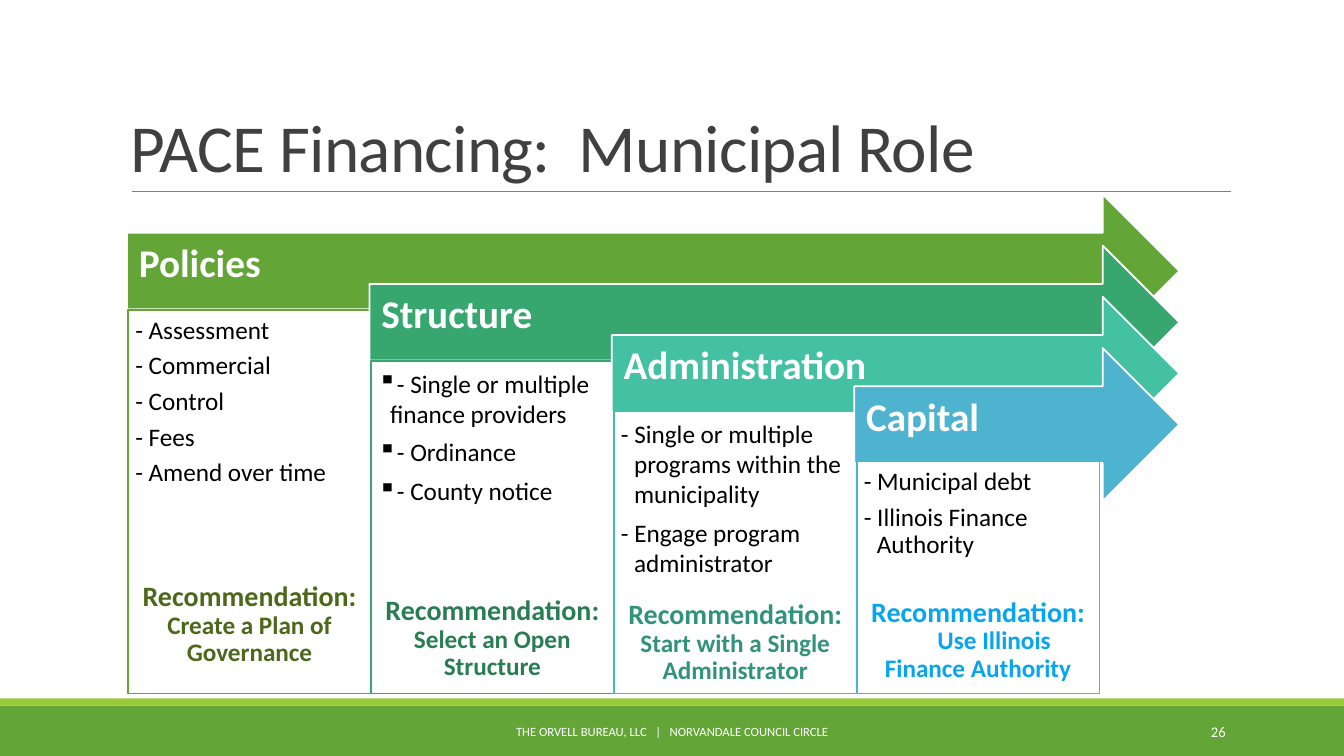
"""Build the municipal role slide with four stepped arrows and their cards."""
from lxml import etree
from pptx import Presentation
from pptx.dml.color import RGBColor
from pptx.enum import shapes, text
from pptx.oxml import ns
from pptx.util import Cm, Pt

FONT = "Calibri"
ARROW_RIGHT = 29.72
CARD_BOTTOM = 17.48
STAGES = [
    {"name": "Policies", "color": "63A537", "accent": "4D671B",
     "items": ["- Assessment", "- Commercial", "- Control", "- Fees", "- Amend over time"],
     "advice": "Create a Plan of Governance", "gap": 68},
    {"name": "Structure", "color": "37A76F", "accent": "297D53",
     "items": ["- Single or multiple finance providers", "- Ordinance", "- County notice"],
     "advice": "Select an Open Structure", "gap": 65,
     "hanging": 0.3, "bullet": "▪", "spacing": 1.0},
    {"name": "Administration", "color": "44C1A3", "accent": "31937B",
     "items": ["- Single or multiple programs within the municipality",
               "- Engage program administrator"],
     "advice": "Start with a Single Administrator", "gap": 16,
     "hanging": 0.33, "spacing": 1.0},
    {"name": "Capital", "color": "4EB3CF", "accent": "08A5EF",
     "items": ["- Municipal debt", "- Illinois Finance Authority"],
     "advice": "Use Illinois\vFinance Authority", "gap": 28,
     "hanging": 0.33, "advice_indent": 0.81},
]


def rgb(value):
    """Turn a hex string into a colour."""
    return RGBColor.from_string(value)


def apply(target, values):
    """Set each named attribute of the target."""
    for name, value in values.items():
        setattr(target, name, value)


def box(left, top, width, height):
    """Return a position and size given in centimetres."""
    return Cm(left), Cm(top), Cm(width), Cm(height)


def set_frame(shape, anchor, insets):
    """Set wrapping, anchor and insets, and return the text frame."""
    left, top, right, bottom = insets
    frame = shape.text_frame
    apply(frame, {"word_wrap": True, "vertical_anchor": anchor,
                  "auto_size": text.MSO_AUTO_SIZE.NONE,
                  "margin_left": Cm(left), "margin_top": Cm(top),
                  "margin_right": Cm(right), "margin_bottom": Cm(bottom)})
    return frame


def write(paragraph, words, size, color, bold=False, align=text.PP_ALIGN.LEFT,
          spacing=0.9, after=0):
    """Fill a paragraph with formatted text."""
    paragraph.text = words
    apply(paragraph, {"alignment": align, "line_spacing": spacing,
                      "space_before": Pt(0), "space_after": Pt(after)})
    for run in paragraph.runs:
        apply(run.font, {"name": FONT, "size": Pt(size), "bold": bold})
        run.font.color.rgb = rgb(color)


def indent(paragraph, margin, first, bullet=None):
    """Set the indents in centimetres, and a bullet where one is given."""
    properties = paragraph._p.get_or_add_pPr()
    properties.set("marL", str(Cm(margin)))
    properties.set("indent", str(Cm(first)))
    if bullet:
        etree.SubElement(properties, ns.qn("a:buChar")).set("char", bullet)


def add_block(slide, kind, place, fill, line=None):
    """Add a filled preset shape, outlined where a line colour is given."""
    shape = slide.shapes.add_shape(kind, *place)
    shape.shadow.inherit = False
    shape.fill.solid()
    shape.fill.fore_color.rgb = rgb(fill)
    if line:
        shape.line.color.rgb = rgb(line)
        shape.line.width = Pt(1.25)
    else:
        shape.line.fill.background()
    return shape


def add_rule(slide, left, right, top):
    """Add the thin rule under the title."""
    rule = slide.shapes.add_connector(shapes.MSO_CONNECTOR.STRAIGHT,
                                      Cm(left), Cm(top), Cm(right), Cm(top))
    rule.line.color.rgb = rgb("808080")
    rule.line.width = Pt(0.5)
    etree.SubElement(rule._element.spPr, ns.qn("a:effectLst"))


def add_footer_text(slide, words, place, size, align):
    """Add a white text on the footer band."""
    frame = set_frame(slide.shapes.add_textbox(*place), text.MSO_ANCHOR.MIDDLE,
                      (0.25, 0.13, 0.25, 0.13))
    write(frame.paragraphs[0], words, size, "FFFFFF", align=align, spacing=1.0)


def add_title(slide, words):
    """Place and format the title."""
    title = slide.shapes.title
    apply(title, dict(zip(("left", "top", "width", "height"), box(3.05, 0.79, 27.94, 4.04))))
    frame = set_frame(title, text.MSO_ANCHOR.BOTTOM, (0.25, 0.13, 0.25, 0.13))
    write(frame.paragraphs[0], words, 48, "404040", spacing=0.85)
    frame.paragraphs[0].runs[0]._r.get_or_add_rPr().set("spc", "-50")


def add_arrow(slide, stage, step):
    """Add the arrow that names a stage."""
    left = 3.2 + 6.11 * step
    arrow = add_block(slide, shapes.MSO_SHAPE.RIGHT_ARROW,
                      box(left, 4.9 + 1.29 * step, ARROW_RIGHT - left, 3.86),
                      stage["color"], "FFFFFF")
    frame = set_frame(arrow, text.MSO_ANCHOR.MIDDLE, (0.3, 0.3, 0.71, 0.61))
    write(frame.paragraphs[0], stage["name"], 28, "FFFFFF", bold=True)


def add_card(slide, stage, step):
    """Add the card with the items and recommendation of a stage."""
    top = 7.82 + 1.27 * step
    card = add_block(slide, shapes.MSO_SHAPE.RECTANGLE,
                     box(3.23 + 6.12 * step, top, 6.12, CARD_BOTTOM - top),
                     "FFFFFF", stage["color"])
    frame = set_frame(card, text.MSO_ANCHOR.TOP, (0.18,) * 4)
    hanging = stage.get("hanging", 0)
    for number, item in enumerate(stage["items"], 1):
        paragraph = frame.paragraphs[0] if number == 1 else frame.add_paragraph()
        after = stage["gap"] if number == len(stage["items"]) else 6
        write(paragraph, item, 18, "000000", spacing=stage.get("spacing", 0.9), after=after)
        indent(paragraph, hanging, -hanging, stage.get("bullet"))
    for words, size in (("Recommendation:", 20), (stage["advice"], 18)):
        paragraph = frame.add_paragraph()
        write(paragraph, words, size, stage["accent"], bold=True, align=text.PP_ALIGN.CENTER)
    indent(paragraph, 0, stage.get("advice_indent", 0))


def main():
    """Build and save the slide."""
    presentation = Presentation()
    presentation.slide_width, presentation.slide_height = Cm(33.87), Cm(19.05)
    slide = presentation.slides.add_slide(presentation.slide_layouts[5])
    add_block(slide, shapes.MSO_SHAPE.RECTANGLE, box(0, 17.78, 33.87, 1.27), "63A537")
    add_block(slide, shapes.MSO_SHAPE.RECTANGLE, box(0, 17.6, 33.87, 0.18), "99CB38")
    add_rule(slide, 3.33, 31.01, 4.83)
    add_footer_text(slide, "THE ORVELL BUREAU, LLC   |   NORVANDALE COUNCIL CIRCLE",
                    box(10.24, 17.93, 13.39, 1.02), 9, text.PP_ALIGN.CENTER)
    add_footer_text(slide, "26", box(27.51, 17.93, 3.63, 1.02), 10.5, text.PP_ALIGN.RIGHT)
    for step, stage in enumerate(STAGES):
        add_arrow(slide, stage, step)
        add_card(slide, stage, step)
    add_title(slide, "PACE Financing:  Municipal Role")
    presentation.save("out.pptx")


if __name__ == "__main__":
    main()
